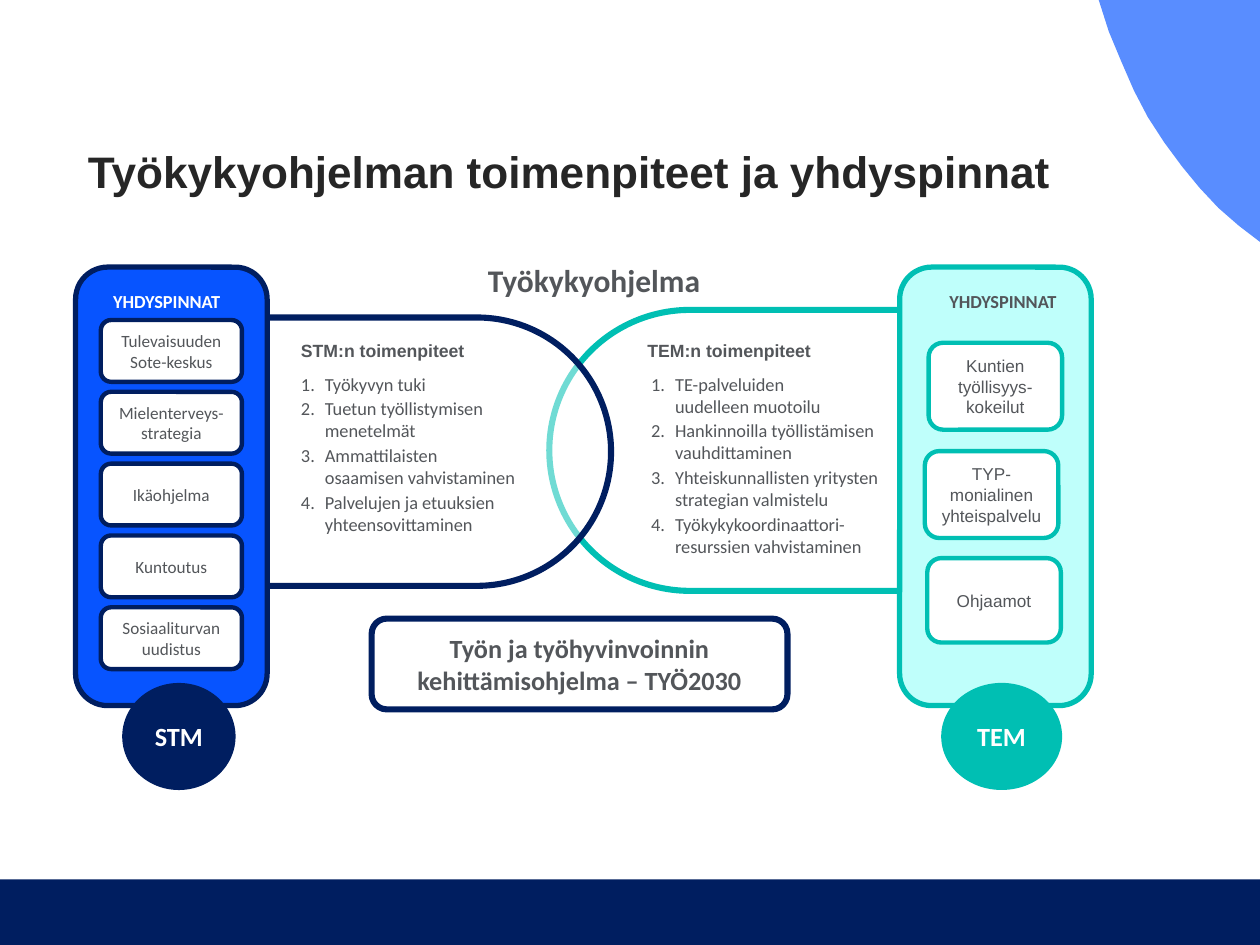
from dataclasses import dataclass
from typing import Optional

from lxml import etree
from pptx import Presentation
from pptx.dml.color import RGBColor
from pptx.enum.shapes import MSO_SHAPE
from pptx.enum.text import MSO_ANCHOR, PP_ALIGN
from pptx.oxml.ns import qn
from pptx.util import Inches, Pt

RECTANGLE = MSO_SHAPE.RECTANGLE
ROUNDED = MSO_SHAPE.ROUNDED_RECTANGLE
OVAL = MSO_SHAPE.OVAL
LEFT, CENTER = PP_ALIGN.LEFT, PP_ALIGN.CENTER
TOP, MIDDLE = MSO_ANCHOR.TOP, MSO_ANCHOR.MIDDLE

WHITE = RGBColor(0xFF, 0xFF, 0xFF)
NAVY = RGBColor(0x00, 0x1E, 0x60)
BLUE = RGBColor(0x07, 0x54, 0xFF)
SKY = RGBColor(0x59, 0x8D, 0xFF)
TEAL = RGBColor(0x00, 0xBF, 0xB3)
MINT = RGBColor(0xBF, 0xFF, 0xFB)
GRAY = RGBColor(0x53, 0x56, 0x5A)
BLACK = RGBColor(0x26, 0x26, 0x26)


@dataclass(frozen=True)
class Area:
    left: float
    top: float
    width: float
    height: float

    def lengths(self) -> list:
        return [Inches(v) for v in (self.left, self.top, self.width, self.height)]


@dataclass(frozen=True)
class Style:
    size: float
    font: str = "Calibri"
    color: RGBColor = GRAY
    bold: bool = False
    align: PP_ALIGN = CENTER


@dataclass(frozen=True)
class Outline:
    color: RGBColor
    width: float


@dataclass(frozen=True)
class Card:
    area: Area
    text: str


TITLE = Style(25.2, "Arial", BLACK, True, LEFT)
HEADING = Style(18, bold=True)
SUBHEADING = Style(10.1, "Arial", bold=True, align=LEFT)
LIST = Style(10.5, align=LEFT)
STM_LABEL = Style(10.5, color=WHITE, bold=True, align=LEFT)
TEM_LABEL = Style(10.5, bold=True)
STM_CARD = Style(9.8)
TEM_CARD = Style(9.8, "Arial")
BANNER = Style(15, bold=True)
BADGE = Style(15, color=WHITE, bold=True)

STM_NAMES = ["Tulevaisuuden Sote-keskus", "Mielenterveys-strategia", "Ikäohjelma",
             "Kuntoutus", "Sosiaaliturvan uudistus"]
STM_CARDS = [Card(Area(0.8, 2.54 + 0.57 * row, 1.12, 0.49), name)
             for row, name in enumerate(STM_NAMES)]
TEM_CARDS = [
    Card(Area(7.37, 2.72, 1.06, 0.69), "Kuntien työllisyys-\nkokeilut"),
    Card(Area(7.34, 3.58, 1.06, 0.69), "TYP- monialinen yhteispalvelu"),
    Card(Area(7.36, 4.43, 1.06, 0.67), "Ohjaamot"),
]
STM_ACTIONS = ["Työkyvyn tuki", "Tuetun työllistymisen menetelmät",
               "Ammattilaisten osaamisen vahvistaminen",
               "Palvelujen ja etuuksien yhteensovittaminen"]
TEM_ACTIONS = ["TE-palveluiden \nuudelleen muotoilu",
               "Hankinnoilla työllistämisen vauhdittaminen",
               "Yhteiskunnallisten yritysten strategian valmistelu",
               "Työkykykoordinaattori-\nresurssien vahvistaminen"]
CORNER_CURVE = [(872, 0), (880, 25), (890, 49), (900, 72), (911, 93), (924, 113),
                (938, 132), (952, 149), (967, 165), (983, 179), (1000, 192)]


def write(para, text: str, style: Style) -> None:
    para.alignment = style.align
    for index, line in enumerate(text.split("\n")):
        if index:
            para.add_line_break()
        span = para.add_run()
        span.text = line
        span.font.size = Pt(style.size)
        span.font.name = style.font
        span.font.bold = style.bold
        span.font.color.rgb = style.color


def add_text(slide, area: Area, text: str, style: Style, anchor=TOP):
    box = slide.shapes.add_textbox(*area.lengths())
    box.text_frame.word_wrap = True
    box.text_frame.vertical_anchor = anchor
    para = box.text_frame.paragraphs[0]
    write(para, text, style)
    return para


def add_numbered_list(slide, area: Area, items: list[str]) -> None:
    box = slide.shapes.add_textbox(*area.lengths())
    frame = box.text_frame
    frame.word_wrap = True
    for index, item in enumerate(items):
        para = frame.add_paragraph() if index else frame.paragraphs[0]
        write(para, item, LIST)
        if index:
            para.space_before = Pt(1.5)
        properties = para._p.get_or_add_pPr()
        properties.set("marL", str(Inches(0.19)))
        properties.set("indent", str(-Inches(0.19)))
        etree.SubElement(properties, qn("a:buAutoNum"), type="arabicPeriod")


def paint(shape, fill: RGBColor, outline: Optional[Outline] = None) -> None:
    shape.shadow.inherit = False
    shape.fill.solid()
    shape.fill.fore_color.rgb = fill
    if outline:
        shape.line.color.rgb = outline.color
        shape.line.width = Pt(outline.width)
    else:
        shape.line.fill.background()


def add_block(slide, kind: MSO_SHAPE, area: Area, fill: RGBColor,
              outline: Optional[Outline] = None, text: str = "",
              style: Style = BADGE):
    shape = slide.shapes.add_shape(kind, *area.lengths())
    paint(shape, fill, outline)
    if text:
        frame = shape.text_frame
        frame.word_wrap = True
        frame.vertical_anchor = MIDDLE
        frame.margin_left = frame.margin_right = Inches(0.07)
        frame.margin_top = frame.margin_bottom = Inches(0.04)
        write(frame.paragraphs[0], text, style)
    return shape


def add_capsule(slide, area: Area, color: RGBColor) -> None:
    capsule = add_block(slide, ROUNDED, area, WHITE, Outline(color, 3.5))
    capsule.adjustments[0] = 0.5
    tint = capsule._element.spPr.find(qn("a:solidFill"))[0]
    etree.SubElement(tint, qn("a:alpha"), val="44000")


def add_cards(slide, cards: list[Card], color: RGBColor, style: Style) -> None:
    for card in cards:
        add_block(slide, ROUNDED, card.area, WHITE, Outline(color, 2.5), card.text, style)


def add_corner(slide) -> None:
    builder = slide.shapes.build_freeform(1000, 0, scale=Inches(0.01))
    builder.add_line_segments(CORNER_CURVE, close=True)
    paint(builder.convert_to_shape(), SKY)


def main() -> None:
    deck = Presentation()
    deck.slide_width, deck.slide_height = Inches(10), Inches(7.5)
    slide = deck.slides.add_slide(deck.slide_layouts[6])

    add_block(slide, RECTANGLE, Area(0, 6.98, 10, 0.52), NAVY)
    add_corner(slide)
    add_capsule(slide, Area(4.36, 2.46, 4.04, 2.23), TEAL)
    add_capsule(slide, Area(0.85, 2.52, 4, 2.13), NAVY)
    add_block(slide, ROUNDED, Area(0.6, 2.12, 1.52, 3.48), BLUE, Outline(NAVY, 3))
    add_block(slide, ROUNDED, Area(7.14, 2.12, 1.52, 3.48), MINT, Outline(TEAL, 3))

    title = add_text(slide, Area(0.6, 0.97, 8.46, 0.83),
                     "Työkykyohjelman toimenpiteet ja yhdyspinnat", TITLE, MIDDLE)
    title.line_spacing = 0.9
    add_text(slide, Area(3.13, 2.02, 3.17, 0.4), "Työkykyohjelma", HEADING)
    add_text(slide, Area(2.29, 2.65, 2.09, 0.27), "STM:n toimenpiteet", SUBHEADING)
    add_text(slide, Area(5.04, 2.65, 2.14, 0.27), "TEM:n toimenpiteet", SUBHEADING)
    add_numbered_list(slide, Area(2.29, 2.91, 1.91, 1.42), STM_ACTIONS)
    add_numbered_list(slide, Area(5.07, 2.91, 2.06, 1.75), TEM_ACTIONS)
    add_text(slide, Area(0.8, 2.25, 1.23, 0.28), "YHDYSPINNAT", STM_LABEL)
    add_text(slide, Area(7.34, 2.25, 1.24, 0.28), "YHDYSPINNAT", TEM_LABEL)

    add_cards(slide, STM_CARDS, NAVY, STM_CARD)
    add_cards(slide, TEM_CARDS, TEAL, TEM_CARD)
    add_block(slide, ROUNDED, Area(2.95, 4.91, 3.3, 0.72), WHITE, Outline(NAVY, 3.5),
              "Työn ja työhyvinvoinnin\nkehittämisohjelma – TYÖ2030", BANNER)
    add_block(slide, OVAL, Area(0.97, 5.42, 0.9, 0.85), NAVY, text="STM")
    add_block(slide, OVAL, Area(7.47, 5.42, 0.96, 0.85), TEAL, text="TEM")

    deck.save("out.pptx")


if __name__ == "__main__":
    main()
